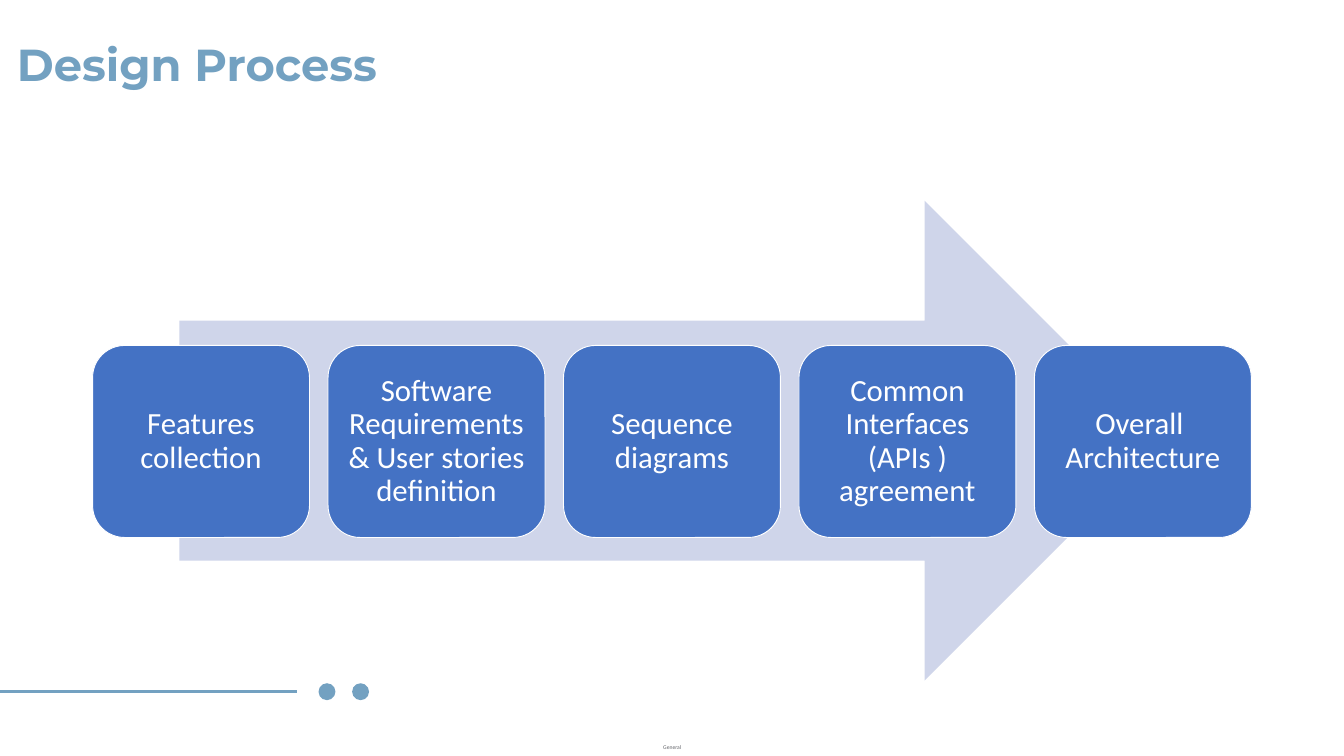
from pptx import Presentation
from pptx.dml.color import RGBColor
from pptx.enum.shapes import MSO_CONNECTOR, MSO_SHAPE
from pptx.enum.text import MSO_ANCHOR, MSO_AUTO_SIZE, PP_ALIGN
from pptx.oxml.ns import qn
from pptx.util import Cm, Pt
from lxml import etree

ARROW, BOX, DOT = MSO_SHAPE.RIGHT_ARROW, MSO_SHAPE.ROUNDED_RECTANGLE, MSO_SHAPE.OVAL
LEFT, CENTER = PP_ALIGN.LEFT, PP_ALIGN.CENTER

COLORS = {
    "accent": "73A1C1",
    "arrow": "CFD5EA",
    "box": "4472C4",
    "white": "FFFFFF",
    "footer": "626469",
}
STEPS = [
    ["Features collection"],
    ["Software Requirements & User stories definition"],
    ["Sequence diagrams"],
    ["Common Interfaces (APIs ) agreement"],
    ["Overall ", "Architecture"],
]


def add_filled_shape(kind, left, top, width, height, color):
    shape = slide.shapes.add_shape(kind, Cm(left), Cm(top), Cm(width), Cm(height))
    shape.shadow.inherit = False
    shape.fill.solid()
    shape.fill.fore_color.rgb = RGBColor.from_string(COLORS[color])
    shape.line.fill.background()
    return shape


def add_run(paragraph, text, size, font, color, bold=False):
    run = paragraph.add_run()
    run.text = text
    run.font.size = Pt(size)
    run.font.name = font
    run.font.bold = bold
    run.font.color.rgb = RGBColor.from_string(COLORS[color])


presentation = Presentation()
presentation.slide_width = Cm(50.8)
presentation.slide_height = Cm(28.58)
slide = presentation.slides.add_slide(presentation.slide_layouts[5])

title = slide.shapes.title
title.left, title.top, title.width, title.height = Cm(0.38), Cm(1.27), Cm(25.02), Cm(2.31)
title.text_frame.auto_size = MSO_AUTO_SIZE.NONE
title.text_frame.vertical_anchor = MSO_ANCHOR.TOP
title_paragraph = title.text_frame.paragraphs[0]
title_paragraph.alignment = LEFT
add_run(title_paragraph, "Design Process", 48, "Montserrat", "accent", bold=True)

footer = slide.shapes.add_textbox(Cm(25.07), Cm(28.14), Cm(0.74), Cm(0.25))
footer_frame = footer.text_frame
footer_frame.margin_left = footer_frame.margin_right = 0
footer_frame.margin_top = footer_frame.margin_bottom = 0
footer_frame.word_wrap = False
add_run(footer_frame.paragraphs[0], "General", 6, "Calibri", "footer")

rule = slide.shapes.add_connector(MSO_CONNECTOR.STRAIGHT, Cm(0), Cm(26.14), Cm(11.23), Cm(26.14))
rule.line.color.rgb = RGBColor.from_string(COLORS["accent"])
rule.line.width = Pt(3)
etree.SubElement(rule.element.spPr, qn("a:effectLst"))

for left in (12.04, 13.31):
    add_filled_shape(DOT, left, 25.83, 0.64, 0.64, "accent")

add_filled_shape(ARROW, 6.78, 7.59, 37.24, 18.14, "arrow")

for index, lines in enumerate(STEPS):
    box = add_filled_shape(BOX, 3.5 + 8.9 * index, 13.06, 8.2, 7.26, "box")
    box.line.color.rgb = RGBColor.from_string(COLORS["white"])
    box.line.width = Pt(1)
    frame = box.text_frame
    frame.word_wrap = True
    frame.vertical_anchor = MSO_ANCHOR.MIDDLE
    frame.margin_left = frame.margin_right = Cm(0.36)
    frame.margin_top = frame.margin_bottom = Cm(0.36)
    paragraph = frame.paragraphs[0]
    paragraph.alignment = CENTER
    paragraph.line_spacing = 0.9
    for number, line in enumerate(lines):
        if number:
            paragraph.add_line_break()
        add_run(paragraph, line, 33, "Calibri", "white")

presentation.save("out.pptx")
